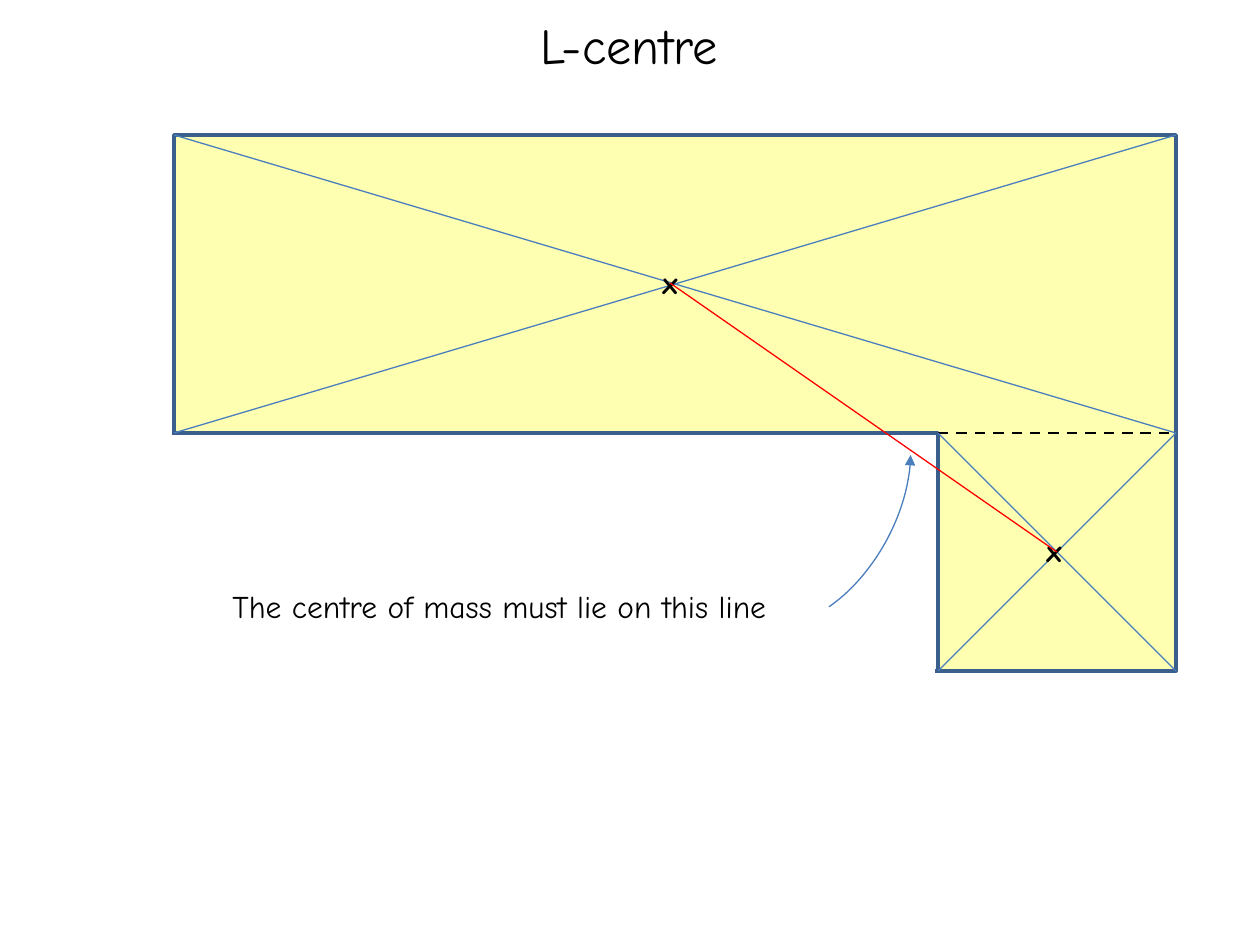
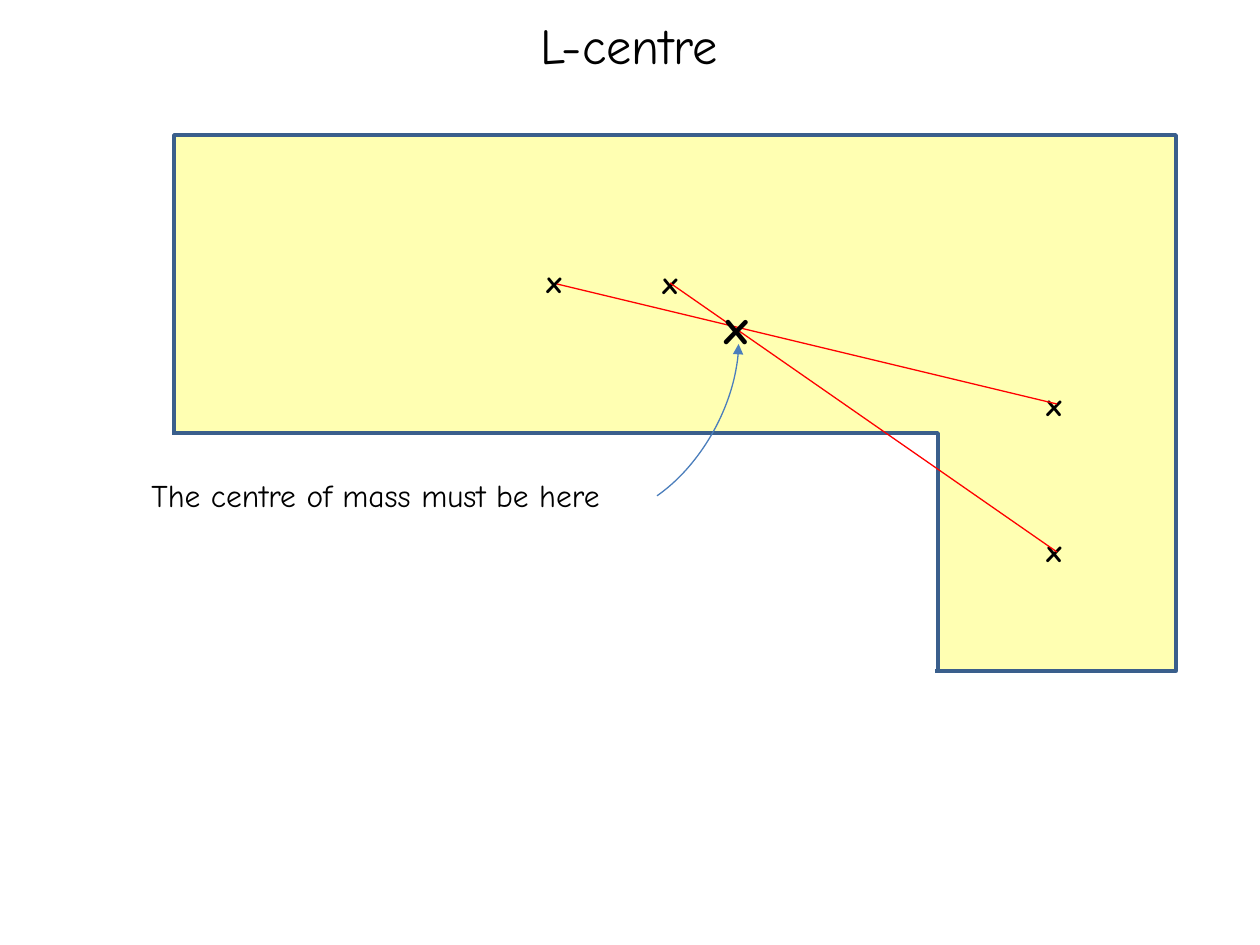
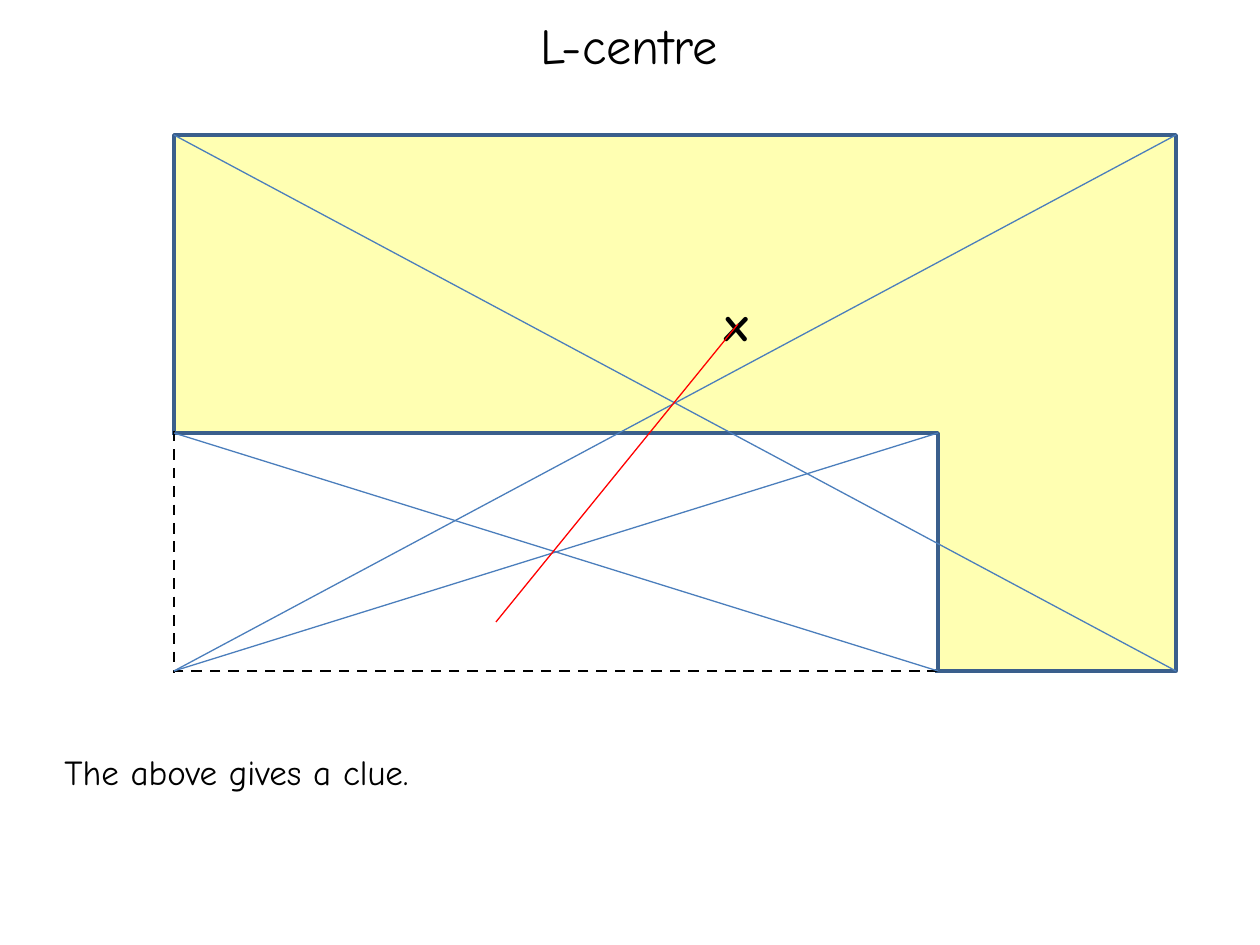
"""Build three slides on finding the centre of mass of an L shape."""
from lxml import etree
from pptx import Presentation
from pptx.dml.color import RGBColor
from pptx.enum.dml import MSO_LINE
from pptx.enum.shapes import MSO_CONNECTOR, MSO_SHAPE
from pptx.enum.text import MSO_ANCHOR, MSO_AUTO_SIZE, PP_ALIGN
from pptx.oxml.ns import qn
from pptx.util import Emu, Pt

RECT, ARC = MSO_SHAPE.RECTANGLE, MSO_SHAPE.ARC
STRAIGHT, DASH = MSO_CONNECTOR.STRAIGHT, MSO_LINE.DASH
MIDDLE, CENTER = MSO_ANCHOR.MIDDLE, PP_ALIGN.CENTER
FIT, FIXED = MSO_AUTO_SIZE.SHAPE_TO_FIT_TEXT, MSO_AUTO_SIZE.NONE

FONT = "Comic Neue"
COLORS = {"ink": "000000", "paper": "FFFFFF", "fill": "FFFF00",
          "edge": "3A5F8C", "guide": "4B7EBC", "axis": "FF0000"}
LEFT, TOP, RIGHT, BOTTOM = 174, 135, 1176, 671
STEP_X, STEP_Y = 938, 433
ARM, FOOT = (670, 283), (1057, 552)


def px(n):
    return Emu(round(n * 914400 / 126))


def rgb(name):
    return RGBColor.from_string(COLORS[name])


def box(x, y, w, h):
    return px(x), px(y), px(w), px(h)


def style(line, color, width):
    line.color.rgb = rgb(color)
    line.width = Pt(width)


def write(frame, text, size=18, bold=False, align=None, wrap=True, fit=FIT):
    frame.word_wrap = wrap
    frame.auto_size = fit
    para = frame.paragraphs[0]
    para.alignment = align
    run = para.add_run()
    run.text = text
    font = run.font
    font.name, font.size, font.bold = FONT, Pt(size), bold
    font.color.rgb = rgb("ink")


def label(slide, text, x, y, w, h, **fmt):
    write(slide.shapes.add_textbox(*box(x, y, w, h)).text_frame, text, **fmt)


def mark(slide, x, y):
    label(slide, "x", x, y, 44, 50, bold=True, wrap=False)


def mass(slide, y):
    label(slide, "x", 712, y, 54, 72, size=28, bold=True, wrap=False)


def rect(slide, x, y, w, h, fill, edge, alpha=None):
    shape = slide.shapes.add_shape(RECT, *box(x, y, w, h))
    shape.shadow.inherit = False
    shape.fill.solid()
    shape.fill.fore_color.rgb = rgb(fill)
    style(shape.line, edge, 2)
    if alpha:
        color = shape.fill._xPr.find(".//" + qn("a:srgbClr"))
        etree.SubElement(color, qn("a:alpha")).set("val", str(alpha * 1000))


def rule(slide, start, end, color="guide", width=0.75, dash=None):
    line = slide.shapes.add_connector(
        STRAIGHT, *(px(n) for n in (*start, *end)))
    style(line.line, color, width)
    if dash:
        line.line.dash_style = dash
    etree.SubElement(line._element.spPr, qn("a:effectLst"))


def dashed(slide, start, end):
    rule(slide, start, end, color="ink", width=1.5, dash=DASH)


def axis(slide, start, end):
    rule(slide, start, end, color="axis")


def cross(slide, left, top, right, bottom):
    rule(slide, (left, top), (right, bottom))
    rule(slide, (left, bottom), (right, top))


def swoop(slide, x, y):
    arc = slide.shapes.add_shape(ARC, *box(x, y, 268, 164))
    arc.shadow.inherit = False
    arc.fill.background()
    arc.rotation = 118.8
    for i, angle in enumerate((215.2, 323.08)):
        arc.adjustments[i] = angle * 0.6
    style(arc.line, "guide", 0.75)
    head = etree.SubElement(arc.line._get_or_add_ln(), qn("a:headEnd"))
    head.set("type", "triangle")


def base(deck):
    slide = deck.slides.add_slide(deck.slide_layouts[5])
    title = slide.shapes.title
    title.left, title.top, title.width, title.height = box(470, 6, 319, 77)
    title.text_frame.vertical_anchor = MIDDLE
    write(title.text_frame, "L-centre", size=28.8, align=CENTER, fit=FIXED)
    rect(slide, LEFT, TOP, RIGHT - LEFT, BOTTOM - TOP, "fill", "edge", alpha=30)
    gap = STEP_X - LEFT, BOTTOM - STEP_Y
    rect(slide, LEFT, STEP_Y, *gap, "paper", "edge")
    rect(slide, LEFT - 5, STEP_Y + 4, *gap, "paper", "paper")
    return slide


def split(deck):
    slide = base(deck)
    dashed(slide, (STEP_X, STEP_Y), (RIGHT, STEP_Y))
    cross(slide, LEFT, TOP, RIGHT, STEP_Y)
    mark(slide, 650, 257)
    cross(slide, STEP_X, STEP_Y, RIGHT, BOTTOM)
    mark(slide, 1034, 525)
    axis(slide, ARM, FOOT)
    swoop(slide, 680, 420)
    label(slide, "The centre of mass must lie on this line", 220, 581, 611, 50)


def meet(deck):
    slide = base(deck)
    for spot in ((650, 257), (1034, 525), (534, 256), (1034, 379)):
        mark(slide, *spot)
    axis(slide, ARM, FOOT)
    axis(slide, (557, 284), (1057, 404))
    mass(slide, 289)
    swoop(slide, 508, 309)
    label(slide, "The centre of mass must be here", 139, 470, 519, 50)


def clue(deck):
    slide = base(deck)
    mass(slide, 286)
    dashed(slide, (STEP_X, BOTTOM), (LEFT, BOTTOM))
    dashed(slide, (LEFT, STEP_Y - 2), (LEFT, BOTTOM + 2))
    cross(slide, LEFT, STEP_Y, STEP_X, BOTTOM)
    cross(slide, LEFT, TOP, RIGHT, BOTTOM)
    axis(slide, (738, 324), (496, 622))
    label(slide, "The above gives a clue.", 52, 744, 1124, 56, size=20)


def main():
    deck = Presentation()
    deck.slide_width, deck.slide_height = px(1260), px(945)
    for build in (split, meet, clue):
        build(deck)
    deck.save("out.pptx")


if __name__ == "__main__":
    main()
